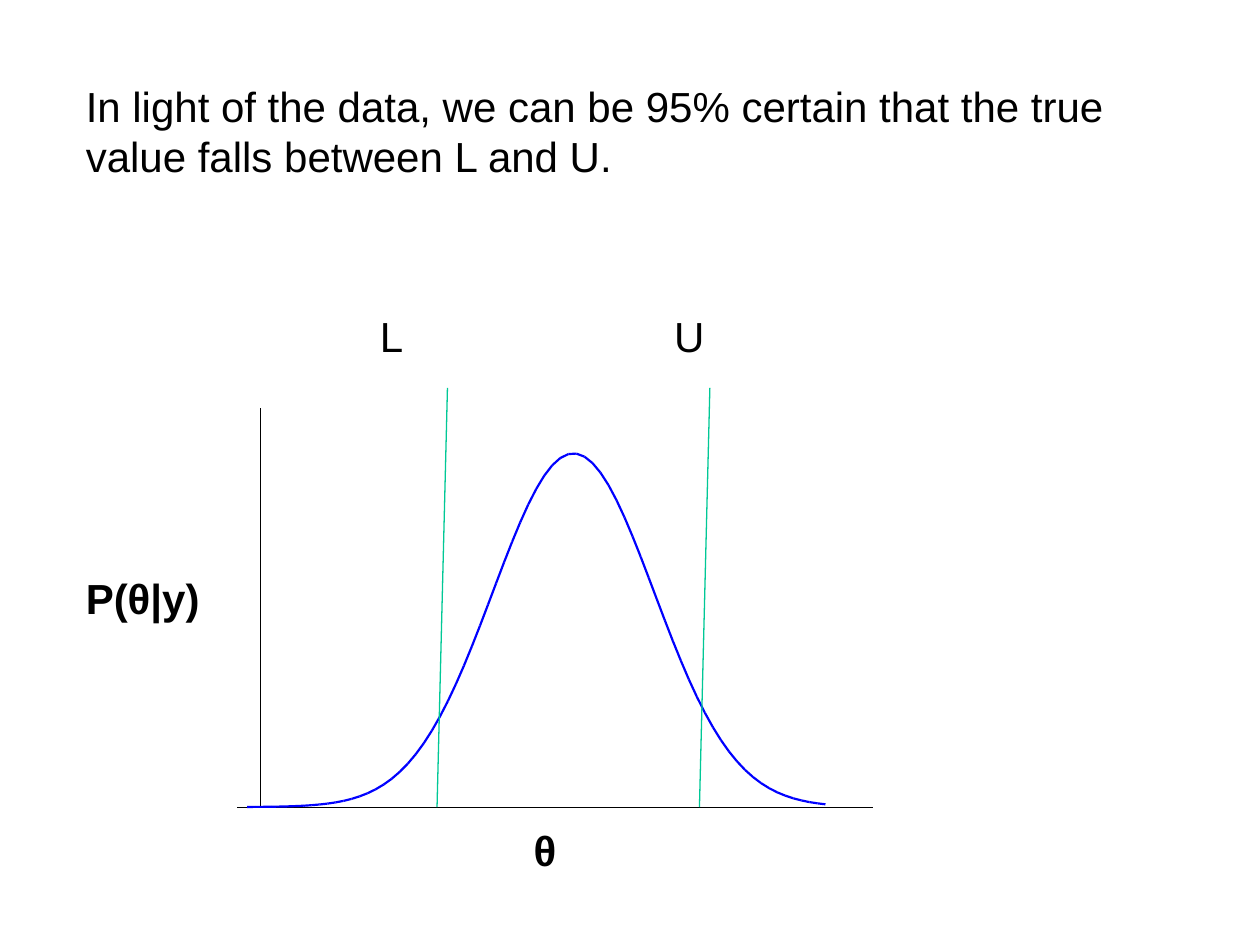
from dataclasses import dataclass
from itertools import pairwise
from math import exp

from lxml.etree import SubElement
from pptx import Presentation
from pptx.dml.color import RGBColor
from pptx.enum.shapes import MSO_CONNECTOR as Connector
from pptx.enum.text import MSO_AUTO_SIZE as AutoSize
from pptx.oxml.ns import qn
from pptx.util import Cm, Pt


@dataclass(frozen=True)
class Theme:
    font: str = "Arial"
    text_size: Pt = Pt(24)
    ink: RGBColor = RGBColor(0x00, 0x00, 0x00)
    curve: RGBColor = RGBColor(0x00, 0x00, 0xFF)
    limit: RGBColor = RGBColor(0x00, 0xC8, 0x96)
    axis_width: Pt = Pt(0)
    limit_width: Pt = Pt(0.75)
    curve_width: Pt = Pt(1.25)


THEME = Theme()
BASELINE = 16.27


def add_text(page, text, left, top, width, height, bold=False):
    box = page.shapes.add_textbox(Cm(left), Cm(top), Cm(width), Cm(height))
    frame = box.text_frame
    frame.text = text
    frame.word_wrap = True
    frame.auto_size = AutoSize.SHAPE_TO_FIT_TEXT
    for para in frame.paragraphs:
        for span in para.runs:
            span.font.name = THEME.font
            span.font.size = THEME.text_size
            span.font.bold = bold
            span.font.color.rgb = THEME.ink


def add_line(parent, start, end, color, width):
    line = parent.shapes.add_connector(Connector.STRAIGHT, *map(Cm, start + end))
    line.line.color.rgb = color
    properties = line._element.spPr
    properties.find(qn("a:ln")).set("w", str(int(width)))
    SubElement(properties, qn("a:effectLst"))


def add_bell_curve(parent, start, end, pieces, mean, deviation, peak):
    points = []
    for index in range(pieces + 1):
        x = start + index * (end - start) / pieces
        height = peak * exp(-(((x - mean) / deviation) ** 2) / 2)
        points.append((x, BASELINE - height))
    for here, there in pairwise(points):
        add_line(parent, here, there, THEME.curve, THEME.curve_width)


def main():
    deck = Presentation()
    deck.slide_width, deck.slide_height = Cm(25.4), Cm(19.05)
    page = deck.slides.add_slide(deck.slide_layouts[6])

    add_line(page, (4.79, BASELINE), (17.58, BASELINE), THEME.ink, THEME.axis_width)
    plot = page.shapes.add_group_shape()
    add_line(plot, (5.25, 8.23), (5.25, BASELINE), THEME.ink, THEME.axis_width)
    add_bell_curve(plot, start=4.98, end=16.64, pieces=72,
                   mean=11.56, deviation=1.63, peak=7.13)

    add_text(page, "θ", 10.51, 16.5, 2.11, 1.3, bold=True)
    add_text(page, "P(θ|y)", 1.48, 11.42, 3.18, 1.3, bold=True)
    add_text(page, "In light of the data, we can be 95% certain that the true\n"
                   "value falls between L and U.", 1.48, 1.49, 21.46, 2.31)

    for name, label_left, top_x, foot_x in (("L", 7.41, 9.02, 8.81),
                                            ("U", 13.34, 14.31, 14.1)):
        add_line(page, (top_x, 7.82), (foot_x, BASELINE),
                 THEME.limit, THEME.limit_width)
        add_text(page, name, label_left, 6.13, 2.11, 1.3)

    deck.save("out.pptx")


if __name__ == "__main__":
    main()
